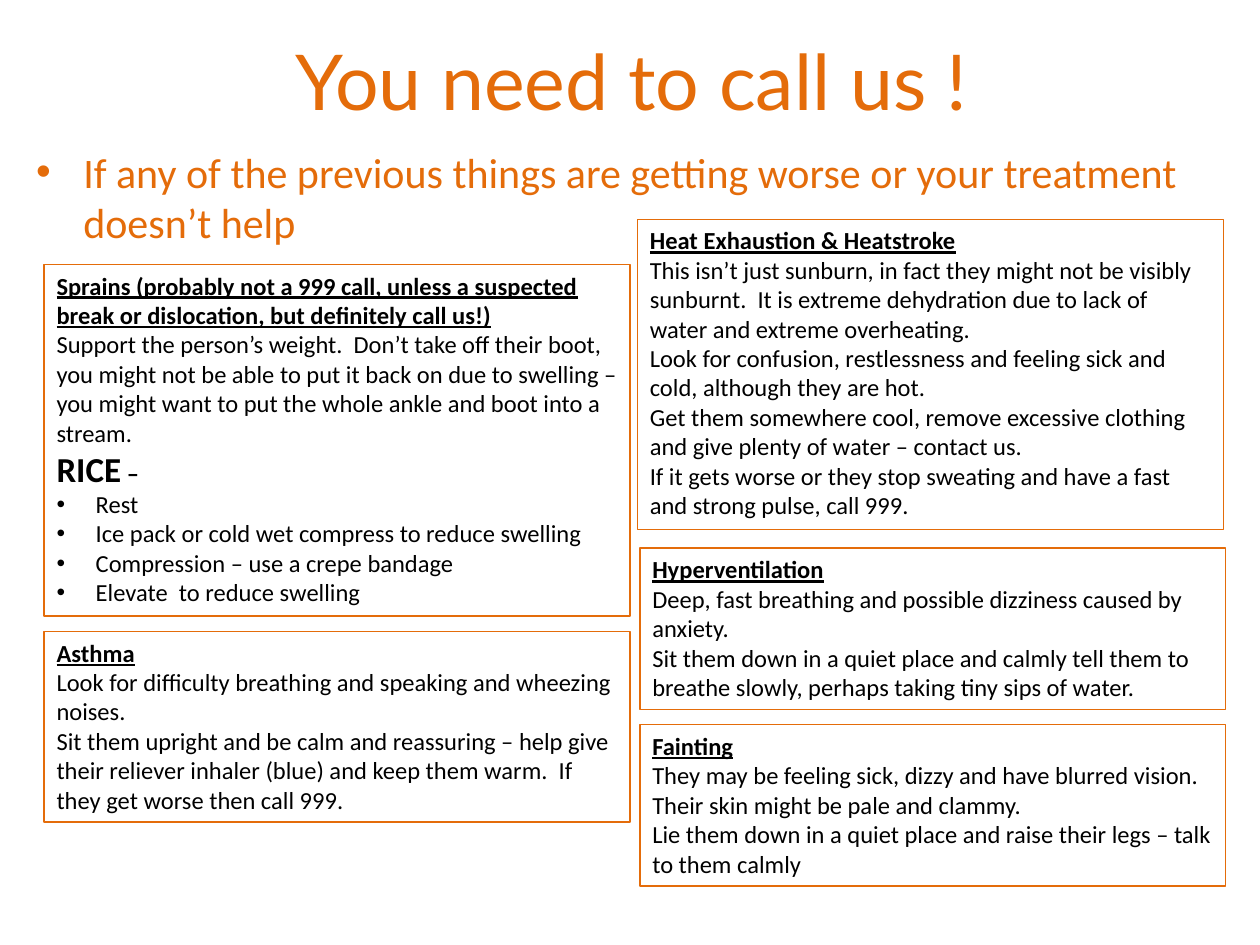
from dataclasses import dataclass

from lxml.etree import SubElement
from pptx import Presentation
from pptx.dml.color import RGBColor
from pptx.enum.shapes import MSO_SHAPE as Shape
from pptx.enum.text import MSO_ANCHOR as Anchor, MSO_AUTO_SIZE as AutoSize, PP_ALIGN as Align
from pptx.oxml.ns import qn
from pptx.util import Cm, Pt


@dataclass(frozen=True)
class Theme:
    accent: RGBColor = RGBColor(0xE4, 0x6C, 0x0A)
    ink: RGBColor = RGBColor(0, 0, 0)
    title_font: str = "Lato"
    body_font: str = "Calibri"
    title_size: int = 44
    lead_size: int = 24
    keyword_size: int = 20
    body_size: int = 14
    border: float = 0.75


class AdvicePage:
    """Holds the theme and the page that is being filled."""

    def __init__(self, page, theme):
        self.page = page
        self.theme = theme

    def span(self, para, text, size=None, bold=False, underline=False, color=None, font=None):
        run = para.add_run()
        run.text = text
        run.font.name = font or self.theme.body_font
        run.font.size = Pt(size or self.theme.body_size)
        run.font.bold = bold
        run.font.underline = underline
        run.font.color.rgb = color or self.theme.ink

    def bullet(self, para, indent):
        """Give the paragraph a hanging round bullet; indent is in cm."""
        props = para._p.get_or_add_pPr()
        props.set("marL", str(Cm(indent)))
        props.set("indent", str(-Cm(indent)))
        SubElement(props, qn("a:buFont"), typeface="Arial")
        SubElement(props, qn("a:buChar"), char="•")

    def text_box(self, left, top, width, height):
        box = self.page.shapes.add_textbox(Cm(left), Cm(top), Cm(width), Cm(height))
        box.text_frame.word_wrap = True
        return box.text_frame

    def title(self, text, *place):
        frame = self.text_box(*place)
        frame.vertical_anchor = Anchor.MIDDLE
        para = frame.paragraphs[0]
        para.alignment = Align.CENTER
        self.span(para, text, self.theme.title_size,
                  color=self.theme.accent, font=self.theme.title_font)

    def lead(self, text, *place):
        para = self.text_box(*place).paragraphs[0]
        para.space_before = Pt(4.8)
        self.bullet(para, 0.95)
        self.span(para, text, self.theme.lead_size, color=self.theme.accent)

    def card(self, left, top, width, height, heading, lines, keyword=None, steps=()):
        box = self.page.shapes.add_shape(
            Shape.RECTANGLE, Cm(left), Cm(top), Cm(width), Cm(height))
        box.shadow.inherit = False
        box.fill.background()
        box.line.color.rgb = self.theme.accent
        box.line.width = Pt(self.theme.border)
        frame = box.text_frame
        frame.word_wrap = True
        frame.auto_size = AutoSize.SHAPE_TO_FIT_TEXT
        frame.vertical_anchor = Anchor.TOP

        def left_para(para):
            para.alignment = Align.LEFT
            return para

        self.span(left_para(frame.paragraphs[0]), heading, bold=True, underline=True)
        for line in lines:
            self.span(left_para(frame.add_paragraph()), line)
        if keyword:
            para = left_para(frame.add_paragraph())
            self.span(para, keyword, self.theme.keyword_size, bold=True)
            self.span(para, " –", bold=True)
        for step in steps:
            para = left_para(frame.add_paragraph())
            self.bullet(para, 0.79)
            self.span(para, step)


def main():
    deck = Presentation()
    deck.slide_width, deck.slide_height = Cm(25.4), Cm(19.05)
    page = AdvicePage(deck.slides.add_slide(deck.slide_layouts[6]), Theme())

    page.lead("If any of the previous things are getting worse or your treatment doesn’t help",
              0.48, 2.82, 24.49, 3.1)
    page.title("You need to call us !", 1.3, 0.53, 22.86, 2.16)

    left, right, width = 0.89, 12.9, 11.81
    page.card(
        left, 5.33, width, 7.09,
        "Sprains (probably not a 999 call, unless a suspected break or dislocation, "
        "but definitely call us!)",
        ["Support the person’s weight.  Don’t take off their boot, you might not be able to "
         "put it back on due to swelling – you might want to put the whole ankle and boot "
         "into a stream."],
        keyword="RICE",
        steps=["Rest",
               "Ice pack or cold wet compress to reduce swelling",
               "Compression – use a crepe bandage",
               "Elevate  to reduce swelling"])
    page.card(
        right - 0.05, 4.42, width, 6.25,
        "Heat Exhaustion & Heatstroke",
        ["This isn’t just sunburn, in fact they might not be visibly sunburnt.  It is extreme "
         "dehydration due to lack of water and extreme overheating.",
         "Look for confusion, restlessness and feeling sick and cold, although they are hot.",
         "Get them somewhere cool, remove excessive clothing and give plenty of water "
         "– contact us.",
         "If it gets worse or they stop sweating and have a fast and strong pulse, call 999."])
    page.card(
        left, 12.73, width, 3.84,
        "Asthma",
        ["Look for difficulty breathing and speaking and wheezing noises.",
         "Sit them upright and be calm and reassuring – help give their reliever inhaler (blue) "
         "and keep them warm.  If they get worse then call 999."])
    page.card(
        right, 11.05, width, 3.25,
        "Hyperventilation",
        ["Deep, fast breathing and possible dizziness caused by anxiety.",
         "Sit them down in a quiet place and calmly tell them to breathe slowly, "
         "perhaps taking tiny sips of water."])
    page.card(
        right, 14.61, width, 3.25,
        "Fainting",
        ["They may be feeling sick, dizzy and have blurred vision.  Their skin might be pale "
         "and clammy.",
         "Lie them down in a quiet place and raise their legs – talk to them calmly"])

    deck.save("out.pptx")


if __name__ == "__main__":
    main()
